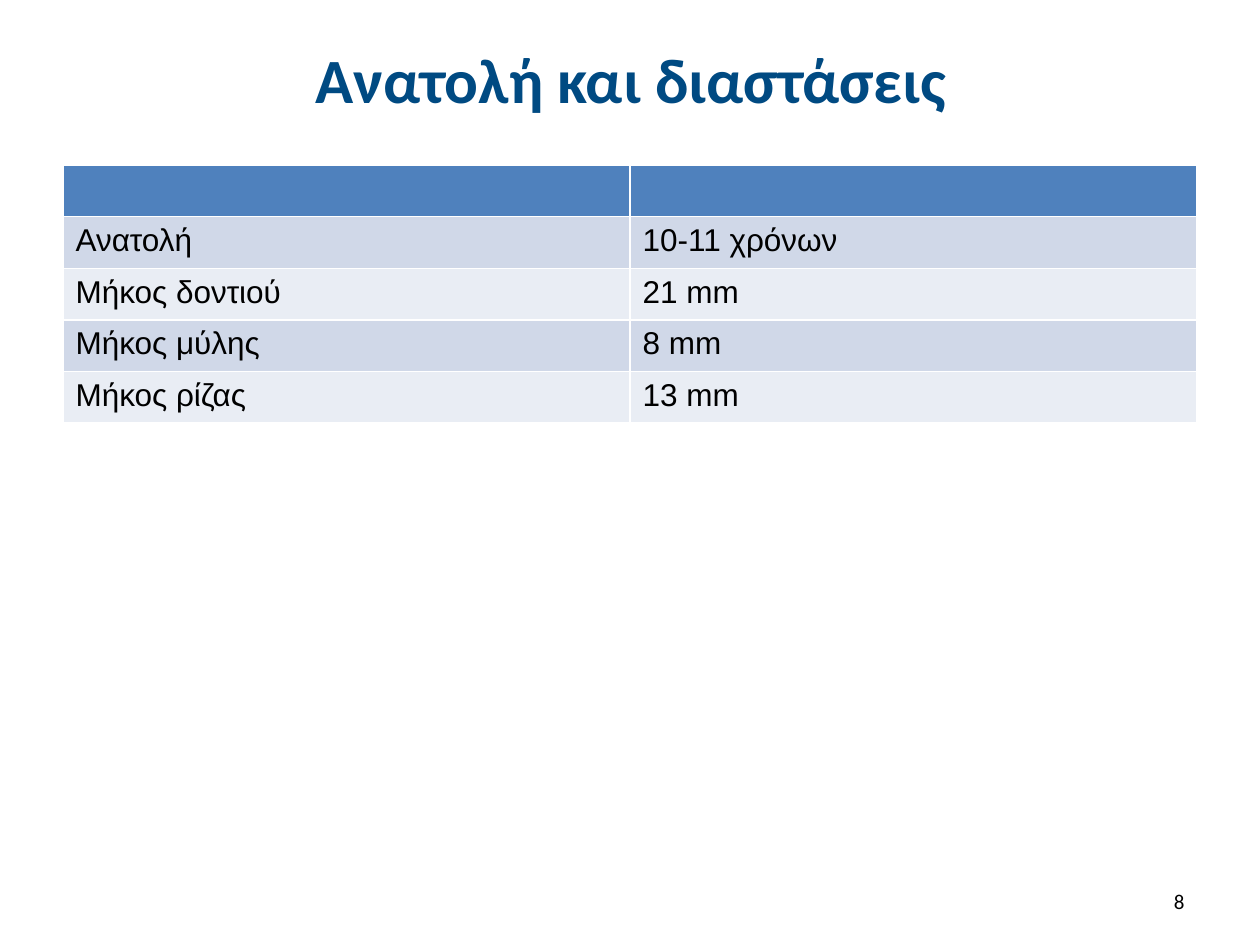
from pptx import Presentation
from pptx.dml.color import RGBColor
from pptx.enum.text import MSO_ANCHOR as Anchor, PP_ALIGN as Align
from pptx.util import Inches, Pt

TITLE_ONLY = 5
MARGIN, CONTENT_WIDTH = 0.5, 9
ROW_HEIGHT = 0.41
HEADER, BANDS = "4F81BD", ("D0D8E8", "E9EDF4")
MEASUREMENTS = [
    ("", ""),
    ("Ανατολή", "10-11 χρόνων"),
    ("Μήκος δοντιού", "21 mm"),
    ("Μήκος μύλης", "8 mm"),
    ("Μήκος ρίζας", "13 mm"),
]


def color(hex_code):
    return RGBColor.from_string(hex_code)


def write(frame, text, size=18, font="Arial", fill="000000", bold=False, align=Align.LEFT):
    paragraph = frame.paragraphs[0]
    paragraph.text = text
    paragraph.alignment = align
    for style in (paragraph.font, *(run.font for run in paragraph.runs)):
        style.size, style.name, style.bold = Pt(size), font, bold
        style.color.rgb = color(fill)


def add_title(slide, text):
    title = slide.shapes.title
    title.left, title.top = Inches(0.51), Inches(0.13)
    title.width, title.height = Inches(CONTENT_WIDTH), Inches(0.99)
    title.text_frame.vertical_anchor = Anchor.MIDDLE
    write(title.text_frame, text, size=36, font="Calibri", fill="004A82",
          bold=True, align=Align.CENTER)


def add_measurements(slide, rows):
    """Add the table; its default style draws the white rules between cells."""
    table = slide.shapes.add_table(
        len(rows), len(rows[0]), Inches(MARGIN), Inches(1.31),
        Inches(CONTENT_WIDTH), Inches(ROW_HEIGHT * len(rows))).table
    for r, row in enumerate(rows):
        for c, text in enumerate(row):
            cell = table.cell(r, c)
            cell.fill.solid()
            cell.fill.fore_color.rgb = color(BANDS[(r - 1) % 2] if r else HEADER)
            write(cell.text_frame, text)


def add_page_number(slide, number):
    width = 2.33
    box = slide.shapes.add_textbox(Inches(MARGIN + CONTENT_WIDTH - width), Inches(6.95),
                                   Inches(width), Inches(0.4))
    box.text_frame.word_wrap = True
    box.text_frame.vertical_anchor = Anchor.MIDDLE
    write(box.text_frame, number, size=12, font="Calibri", align=Align.RIGHT)


def main():
    deck = Presentation()
    deck.slide_width, deck.slide_height = Inches(10), Inches(7.5)
    slide = deck.slides.add_slide(deck.slide_layouts[TITLE_ONLY])
    add_title(slide, "Ανατολή και διαστάσεις")
    add_measurements(slide, MEASUREMENTS)
    add_page_number(slide, "8")
    deck.save("out.pptx")


if __name__ == "__main__":
    main()
